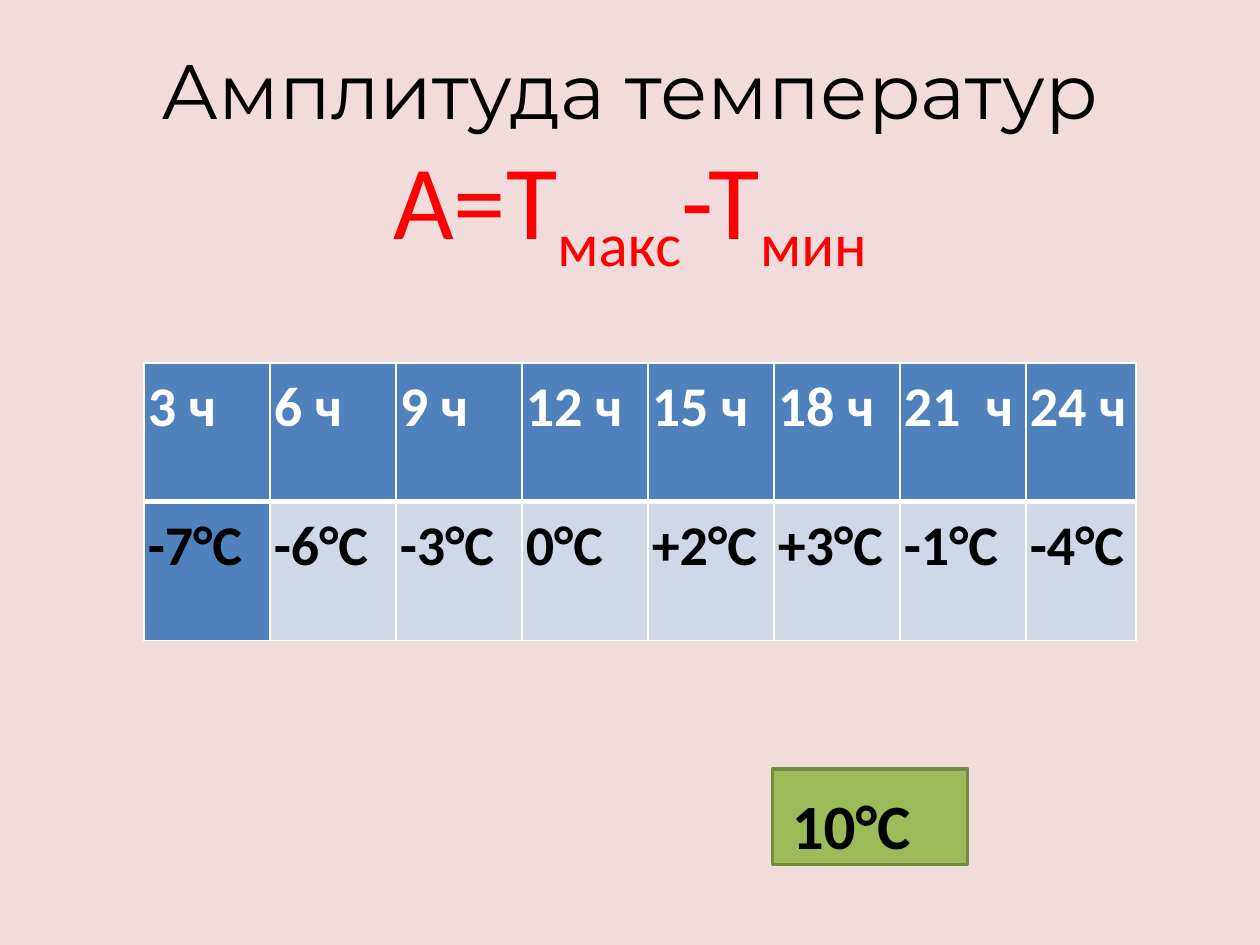
from dataclasses import dataclass

import lxml.etree
import pptx
import pptx.dml.color
import pptx.enum.shapes
import pptx.enum.text
import pptx.oxml.ns
import pptx.util
from pptx.util import Cm, Pt


def rgb(code):
    return pptx.dml.color.RGBColor.from_string(code)


@dataclass(frozen=True)
class Theme:
    background: str = "F2DCDB"
    black: str = "000000"
    white: str = "FFFFFF"
    formula: str = "FF0000"
    header: str = "4F81BD"
    band: str = "D0D8E8"
    answer: str = "9BBB59"
    answer_line: str = "738A42"
    title_font: str = "Montserrat"
    body_font: str = "Calibri"
    title_size: int = 44
    formula_size: int = 60
    table_size: int = 32
    answer_size: int = 36
    space_size: int = 18


THEME = Theme()
READINGS = [
    ("3 ч", "-7°С"), ("6 ч", "-6°С"), ("9 ч", "-3°С"), ("12 ч", "0°С"),
    ("15 ч", "+2°С"), ("18 ч", "+3°С"), ("21  ч", "-1°С"), ("24 ч", "-4°С"),
]


def style(font, name, size, color, bold=False):
    font.name, font.size, font.bold = name, Pt(size), bold
    font.color.rgb = rgb(color)


def space_body(para):
    para.line_spacing = 1.15
    para.space_after = Pt(10)


def add_title(page, left, top, width, height):
    box = page.shapes.add_textbox(left, top, width, height)
    frame = box.text_frame
    frame.word_wrap = True
    frame.vertical_anchor = pptx.enum.text.MSO_ANCHOR.MIDDLE
    para = frame.paragraphs[0]
    para.alignment = pptx.enum.text.PP_ALIGN.CENTER
    span = para.add_run()
    span.text = "Амплитуда температур"
    style(span.font, THEME.title_font, THEME.title_size, THEME.black)
    para.add_line_break()
    # Formula with subscripts
    for text, subscript in [("А=Т", False), ("макс", True), ("-Т", False), ("мин", True)]:
        span = para.add_run()
        span.text = text
        style(span.font, THEME.body_font, THEME.formula_size, THEME.formula)
        if subscript:
            span.font._element.set("baseline", "-25000")


def set_borders(cell, widths):
    properties = cell._tc.get_or_add_tcPr()
    for index, (side, width) in enumerate(widths.items()):
        line = lxml.etree.Element(pptx.oxml.ns.qn(f"a:ln{side}"), w=str(Pt(width)))
        fill = lxml.etree.SubElement(line, pptx.oxml.ns.qn("a:solidFill"))
        lxml.etree.SubElement(fill, pptx.oxml.ns.qn("a:srgbClr"), val=THEME.white)
        properties.insert(index, line)


def add_readings(page, left, top, width, height):
    count = len(READINGS)
    table = page.shapes.add_table(2, count, left, top, width, height).table
    # The last column takes what the equal columns leave
    step = Cm(2.54)
    for column in table.columns:
        column.width = step
    table.columns[count - 1].width = width - step * (count - 1)
    for row_index in range(2):
        for column_index, reading in enumerate(READINGS):
            cell = table.cell(row_index, column_index)
            is_header = row_index == 0
            cell.margin_left = cell.margin_right = Cm(0.08)
            cell.margin_top = cell.margin_bottom = 0
            cell.fill.solid()
            cell.fill.fore_color.rgb = rgb(
                THEME.header if is_header or column_index == 0 else THEME.band)
            # A thick rule parts the header from the values
            set_borders(cell, {"L": 1, "R": 1, "T": 1 if is_header else 3,
                               "B": 3 if is_header else 1})
            para = cell.text_frame.paragraphs[0]
            para.text = reading[row_index]
            space_body(para)
            style(para.font, THEME.body_font, THEME.table_size,
                  THEME.white if is_header else THEME.black, bold=True)


def add_answer(page, left, top, width, height):
    box = page.shapes.add_shape(
        pptx.enum.shapes.MSO_SHAPE.RECTANGLE, left, top, width, height)
    box.shadow.inherit = False
    box.fill.solid()
    box.fill.fore_color.rgb = rgb(THEME.answer)
    box.line.color.rgb = rgb(THEME.answer_line)
    box.line.width = Pt(2)
    frame = box.text_frame
    frame.word_wrap = True
    frame.vertical_anchor = pptx.enum.text.MSO_ANCHOR.TOP
    para = frame.paragraphs[0]
    para.alignment = pptx.enum.text.PP_ALIGN.LEFT
    space_body(para)
    for text, size, color in [(" ", THEME.space_size, THEME.white),
                              ("10°С", THEME.answer_size, THEME.black)]:
        span = para.add_run()
        span.text = text
        style(span.font, THEME.body_font, size, color, bold=True)


def main():
    deck = pptx.Presentation()
    deck.slide_width, deck.slide_height = Cm(25.4), Cm(19.05)
    page = deck.slides.add_slide(deck.slide_layouts[6])
    page.background.fill.solid()
    page.background.fill.fore_color.rgb = rgb(THEME.background)
    add_title(page, Cm(1.27), Cm(0.76), Cm(22.86), Cm(4.95))
    add_readings(page, Cm(2.9), Cm(7.32), Cm(20), Cm(5.59))
    add_answer(page, Cm(15.57), Cm(15.5), Cm(3.94), Cm(1.93))
    deck.save("out.pptx")


if __name__ == "__main__":
    main()
